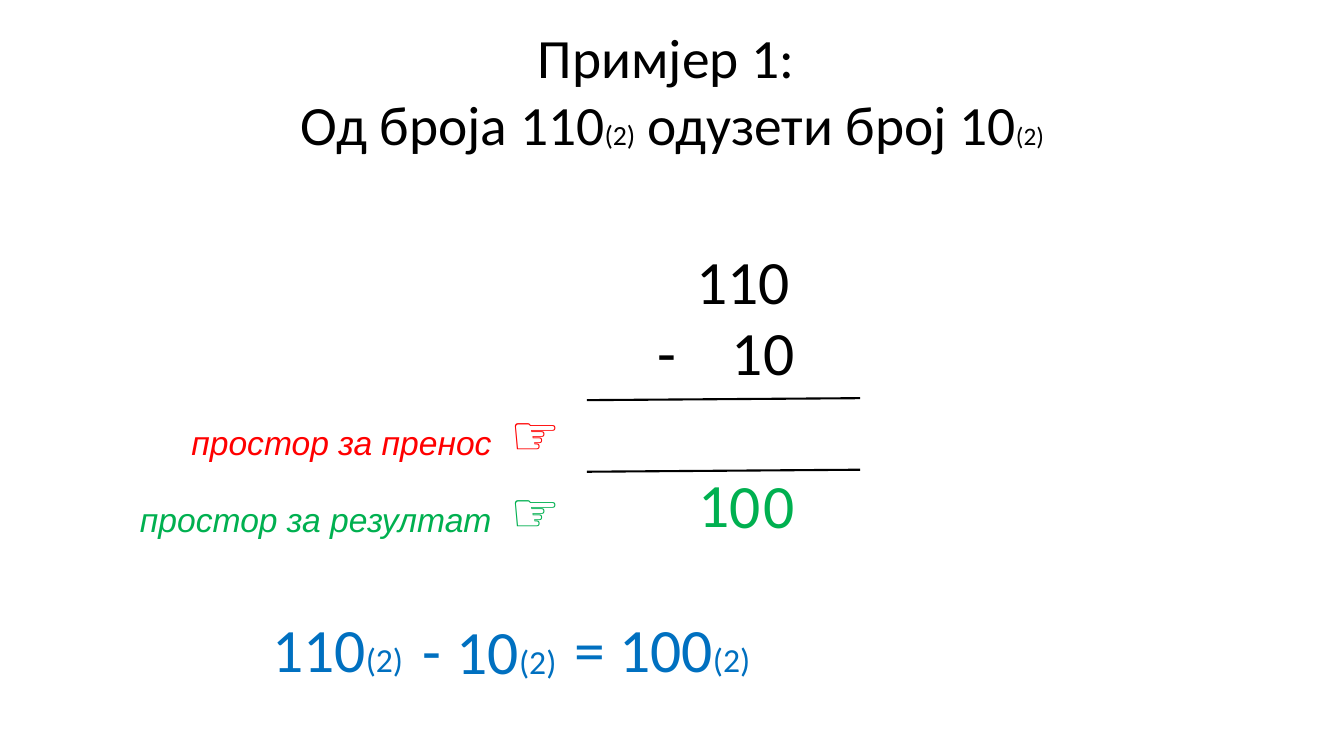
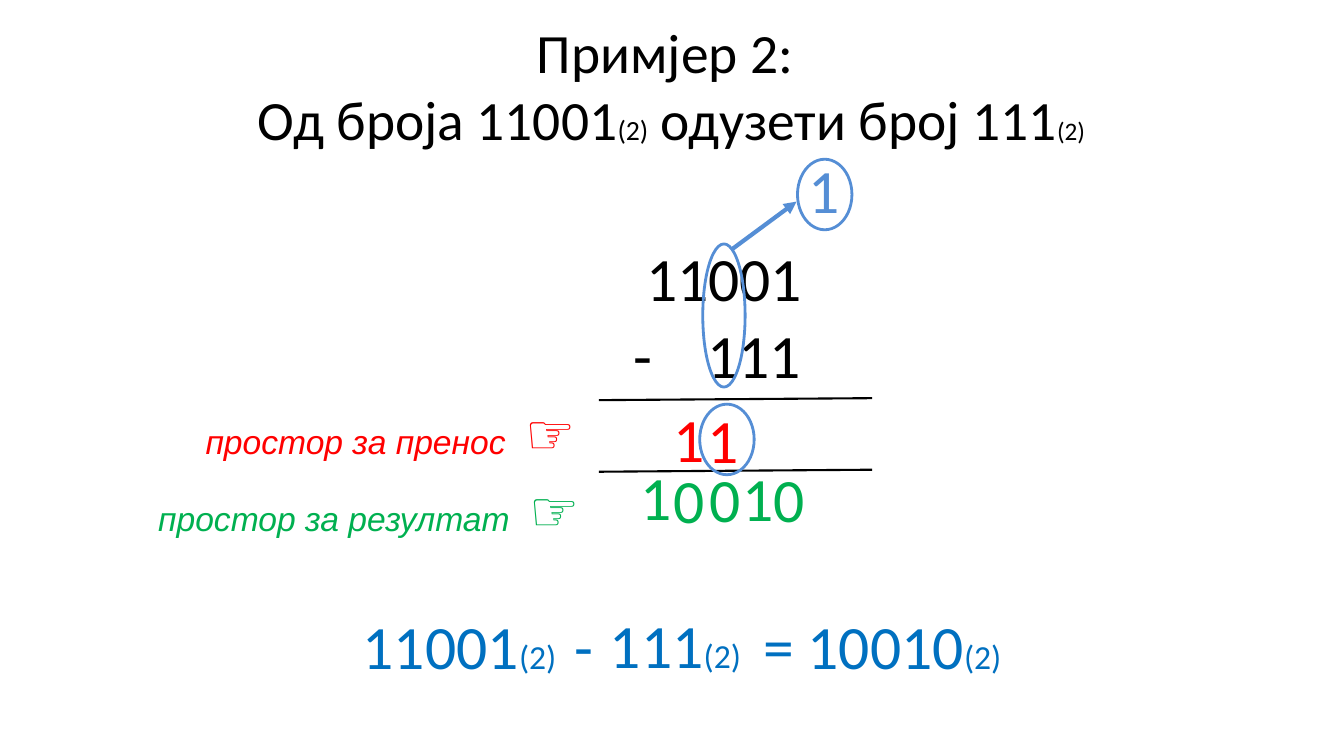
import pptx
import pptx.util
import pptx.dml.color
import pptx.enum.shapes
import pptx.enum.text
import pptx.oxml
import pptx.oxml.ns

Inches = pptx.util.Inches
Pt = pptx.util.Pt
TEXT = pptx.enum.text

BLACK = "000000"
RED = "FF0000"
GREEN = "00B050"
BLUE = "0070C0"
SKY = "558ED5"
BIG, SMALL = 44, 24


def color(code):
    return pptx.dml.color.RGBColor.from_string(code)


def node(parent, tag, **attrs):
    item = pptx.oxml.parse_xml(f"<a:{tag} {pptx.oxml.ns.nsdecls('a')}/>")
    for key, value in attrs.items():
        item.set(key, str(value))
    parent.append(item)
    return item


class Deck:
    def __init__(self):
        self.file = pptx.Presentation()
        self.file.slide_width = Inches(13.33)
        self.file.slide_height = Inches(7.5)

    def run(self, para, text, size, code, font="Calibri", slant=False):
        run = para.add_run()
        run.text = text
        run.font.size = Pt(size)
        run.font.name = font
        run.font.italic = slant
        run.font.color.rgb = color(code)

    def title(self, left, top, number, first, second):
        self.slide = self.file.slides.add_slide(self.file.slide_layouts[5])
        title = self.slide.shapes.title
        title.left, title.top = Inches(left), Inches(top)
        title.width, title.height = Inches(12), Inches(1.44)
        frame = title.text_frame
        frame.word_wrap = True
        frame.auto_size = TEXT.MSO_AUTO_SIZE.NONE
        frame.vertical_anchor = TEXT.MSO_ANCHOR.MIDDLE
        para = frame.paragraphs[0]
        para.alignment = TEXT.PP_ALIGN.CENTER
        self.run(para, f"Примјер {number}: ", 39.6, BLACK)
        para.add_line_break()
        for text, size in ((f"Од броја {first}", 39.6), ("(2)", 19.8),
                           (f" одузети број {second}", 39.6), ("(2)", 18)):
            self.run(para, text, size, BLACK)

    def box(self, left, top, width, height=0.84, tab=None):
        shape = self.slide.shapes.add_textbox(
            Inches(left), Inches(top), Inches(width), Inches(height))
        frame = shape.text_frame
        frame.word_wrap = True
        frame.auto_size = TEXT.MSO_AUTO_SIZE.SHAPE_TO_FIT_TEXT
        para = frame.paragraphs[0]
        if tab:
            stops = node(para._p.get_or_add_pPr(), "tabLst")
            node(stops, "tab", pos=Inches(tab), algn="l")
        return para

    def number(self, left, top, width, text, code=BLACK, base=False, tab=None):
        para = self.box(left, top, width, tab=tab)
        self.run(para, text, BIG, code)
        if base:
            self.run(para, "(2)", SMALL, code)

    def digits(self, spots, code):
        for left, top, digit in spots:
            self.number(left, top, 0.6, digit, code)

    def label(self, left, top, text, code, tab):
        para = self.box(left, top, 5.04, 0.77, tab)
        self.run(para, text + "\t", SMALL, code, "Arial", True)
        self.run(para, "☞", 40, code, "Arial", True)

    def labels(self, carry, result):
        self.label(*carry, "простор за пренос", RED, 3.17)
        self.label(*result, "простор за резултат", GREEN, 3.68)

    def line(self, start, end, code=BLACK, width=1.5, arrow=False):
        line = self.slide.shapes.add_connector(
            pptx.enum.shapes.MSO_CONNECTOR.STRAIGHT,
            *map(Inches, start + end))
        line.line.color.rgb = color(code)
        line.line.width = Pt(width)
        if arrow:
            node(line.line._get_or_add_ln(), "tailEnd", type="triangle")
        node(line._element.spPr, "effectLst")

    def rules(self, left):
        for top in (3.95, 4.66):
            self.line((left, top + 0.02), (left + 2.71, top))

    def oval(self, left, top, width, height):
        oval = self.slide.shapes.add_shape(
            pptx.enum.shapes.MSO_SHAPE.OVAL,
            Inches(left), Inches(top), Inches(width), Inches(height))
        oval.shadow.inherit = False
        oval.fill.background()
        oval.line.color.rgb = color(SKY)
        oval.line.width = Pt(2)

    def answer(self, parts):
        for left, top, width, text, base in parts:
            self.number(left, top, width, text, BLUE, base)


def first(deck):
    deck.title(0.67, 0.17, 1, "110", "10")
    deck.number(6.81, 2.36, 2.11, "110")
    deck.number(6.42, 3.07, 1.88, "-\t10", tab=0.74)
    deck.rules(5.82)
    deck.digits([(6.83, 4.57, "1"), (7.14, 4.58, "0"),
                 (7.47, 4.58, "0")], GREEN)
    deck.labels((1.8, 3.91), (1.29, 4.68))
    deck.answer([(2.6, 6.01, 1.65, "110", True), (4.09, 6.02, 0.58, "-", False),
                 (4.43, 6.03, 1.65, "10", True), (5.6, 6.01, 2.24, "= 100", True)])


def second(deck):
    deck.title(0.66, 0.12, 2, "11001", "111")
    deck.number(6.31, 2.33, 2.11, "11001")
    deck.number(6.18, 3.1, 1.88, "-\t111", tab=0.74)
    deck.rules(5.94)
    deck.digits([(6.25, 4.5, "1"), (6.58, 4.53, "0"), (6.94, 4.52, "0"),
                 (7.27, 4.51, "1"), (7.57, 4.52, "0")], GREEN)
    deck.digits([(6.58, 3.93, "1"), (6.92, 3.94, "1")], RED)
    deck.labels((1.94, 3.9), (1.47, 4.67))
    deck.line((7.25, 2.48), (7.9, 2), SKY, 3, True)
    deck.oval(6.97, 2.42, 0.42, 1.42)
    for left, top in ((7.91, 1.58), (6.94, 4.01)):
        deck.oval(left, top, 0.54, 0.7)
    deck.digits([(7.92, 1.46, "1")], SKY)
    deck.answer([(3.5, 5.98, 2.33, "11001", True), (5.6, 5.98, 0.58, "-", False),
                 (5.95, 5.97, 1.65, "111", True), (7.47, 5.98, 2.71, "= 10010", True)])


def main():
    deck = Deck()
    first(deck)
    second(deck)
    deck.file.save("out.pptx")


if __name__ == "__main__":
    main()
